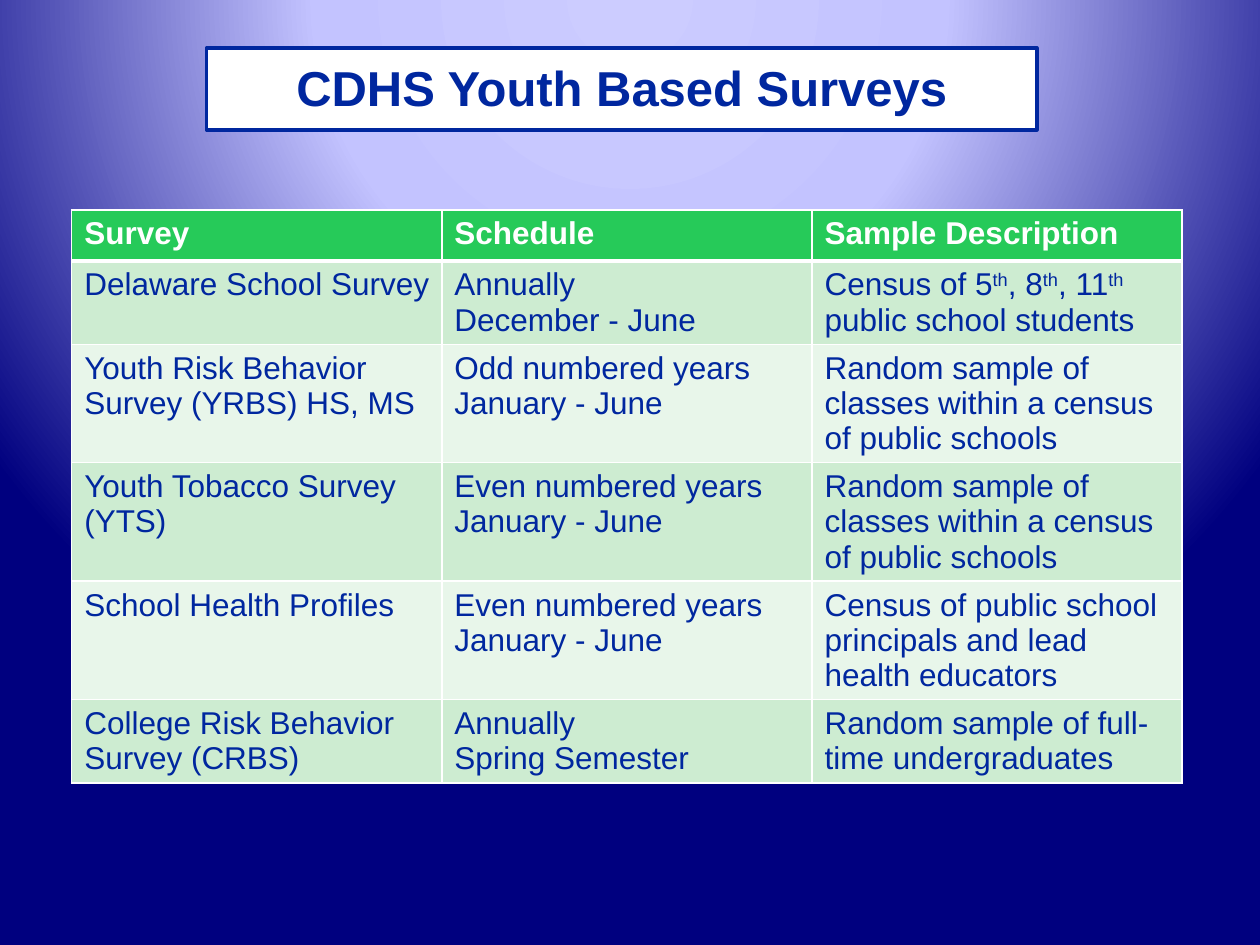
"""Build the slide that lists the CDHS youth surveys with schedule and sample."""
from dataclasses import dataclass

from lxml.etree import SubElement
from pptx import Presentation
from pptx.dml.color import RGBColor
from pptx.enum.shapes import MSO_SHAPE
from pptx.enum.text import MSO_ANCHOR, PP_ALIGN
from pptx.oxml import parse_xml
from pptx.oxml.ns import nsdecls, qn
from pptx.slide import Slide
from pptx.table import _Cell
from pptx.text.text import _Paragraph
from pptx.util import Pt

FONT_NAME = "Arial"
WHITE = RGBColor(0xFF, 0xFF, 0xFF)
NAVY = RGBColor(0x00, 0x27, 0x9F)
HEADER_GREEN = RGBColor(0x26, 0xCA, 0x59)
BAND_COLORS = (RGBColor(0xCD, 0xEC, 0xD1), RGBColor(0xE8, 0xF6, 0xEA))
BACKGROUND_STOPS = (
    (0, RGBColor(0xCC, 0xCC, 0xFF)),
    (40, RGBColor(0xC3, 0xC3, 0xFF)),
    (100, RGBColor(0x00, 0x00, 0x7F)),
)
SUPERSCRIPT_MARK = "^"
COLUMN_WIDTH = 211.5
ROW_HEIGHT = 29.2


@dataclass(frozen=True)
class Survey:
    name: str
    schedule: str
    sample: str


@dataclass(frozen=True)
class CellStyle:
    fill: RGBColor
    text: RGBColor
    bold: bool
    bottom_border: float


HEADER = Survey("Survey", "Schedule", "Sample Description")
SURVEYS = (
    Survey("Delaware School Survey", "Annually\nDecember - June",
           "Census of 5^th^, 8^th^, 11^th^ public school students"),
    Survey("Youth Risk Behavior Survey (YRBS) HS, MS",
           "Odd numbered years\nJanuary - June",
           "Random sample of classes within a census of public schools"),
    Survey("Youth Tobacco Survey (YTS)", "Even numbered years\nJanuary - June",
           "Random sample of classes within a census of public schools"),
    Survey("School Health Profiles", "Even numbered years\nJanuary - June",
           "Census of public school principals and lead health educators"),
    Survey("College Risk Behavior Survey (CRBS)", "Annually\nSpring Semester",
           "Random sample of full-time undergraduates"),
)
HEADER_STYLE = CellStyle(HEADER_GREEN, WHITE, True, 3)
BAND_STYLES = tuple(CellStyle(color, NAVY, False, 1) for color in BAND_COLORS)


def set_background(slide: Slide) -> None:
    stops = "".join(
        f'<a:gs pos="{position * 1000}"><a:srgbClr val="{color}"/></a:gs>'
        for position, color in BACKGROUND_STOPS
    )
    background = parse_xml(
        f'<p:bg {nsdecls("p", "a")}><p:bgPr><a:gradFill rotWithShape="1">'
        f'<a:gsLst>{stops}</a:gsLst><a:path path="circle">'
        '<a:fillToRect l="50000" t="-80000" r="50000" b="180000"/></a:path>'
        "</a:gradFill><a:effectLst/></p:bgPr></p:bg>"
    )
    slide.element.cSld.insert(0, background)


def style_paragraph(paragraph: _Paragraph, size: float, color: RGBColor, bold: bool) -> None:
    font = paragraph.font
    font.name, font.size, font.bold = FONT_NAME, Pt(size), bold
    font.color.rgb = color


def add_title(slide: Slide, text: str) -> None:
    shape = slide.shapes.add_shape(MSO_SHAPE.RECTANGLE, Pt(118), Pt(27.4), Pt(474.5), Pt(46.8))
    shape.shadow.inherit = False
    shape.fill.solid()
    shape.fill.fore_color.rgb = WHITE
    shape.line.color.rgb = NAVY
    shape.line.width = Pt(2)
    frame = shape.text_frame
    frame.vertical_anchor = MSO_ANCHOR.MIDDLE
    frame.margin_bottom = Pt(6)
    paragraph = frame.paragraphs[0]
    paragraph.text = text
    paragraph.alignment = PP_ALIGN.CENTER
    style_paragraph(paragraph, 28, NAVY, True)


def set_borders(cell: _Cell, bottom_width: float) -> None:
    properties = cell._tc.get_or_add_tcPr()
    widths = {"a:lnL": 1, "a:lnR": 1, "a:lnT": 1, "a:lnB": bottom_width}
    for index, (tag, width) in enumerate(widths.items()):
        line = SubElement(properties, qn(tag), w=str(Pt(width)))
        fill = SubElement(line, qn("a:solidFill"))
        SubElement(fill, qn("a:srgbClr"), val=str(WHITE))
        properties.insert(index, line)


def fill_cell(cell: _Cell, text: str, style: CellStyle) -> None:
    cell.fill.solid()
    cell.fill.fore_color.rgb = style.fill
    set_borders(cell, style.bottom_border)
    cell.text = text.replace(SUPERSCRIPT_MARK, "")
    for paragraph, line in zip(cell.text_frame.paragraphs, text.split("\n")):
        paragraph.clear()
        style_paragraph(paragraph, 18, style.text, style.bold)
        for index, piece in enumerate(line.split(SUPERSCRIPT_MARK)):
            run = paragraph.add_run()
            run.text = piece
            if index % 2:
                run._r.get_or_add_rPr().set("baseline", "30000")


def add_survey_table(slide: Slide) -> None:
    rows = (HEADER, *SURVEYS)
    table = slide.shapes.add_table(
        len(rows), 3, Pt(41), Pt(120), Pt(3 * COLUMN_WIDTH), Pt(len(rows) * ROW_HEIGHT)
    ).table
    table.horz_banding = False
    for row_index, survey in enumerate(rows):
        style = BAND_STYLES[(row_index - 1) % 2] if row_index else HEADER_STYLE
        for column_index, text in enumerate((survey.name, survey.schedule, survey.sample)):
            fill_cell(table.cell(row_index, column_index), text, style)


def main() -> None:
    presentation = Presentation()
    presentation.slide_width, presentation.slide_height = Pt(720), Pt(540)
    slide = presentation.slides.add_slide(presentation.slide_layouts[6])
    set_background(slide)
    add_title(slide, "CDHS Youth Based Surveys")
    add_survey_table(slide)
    presentation.save("out.pptx")


if __name__ == "__main__":
    main()
